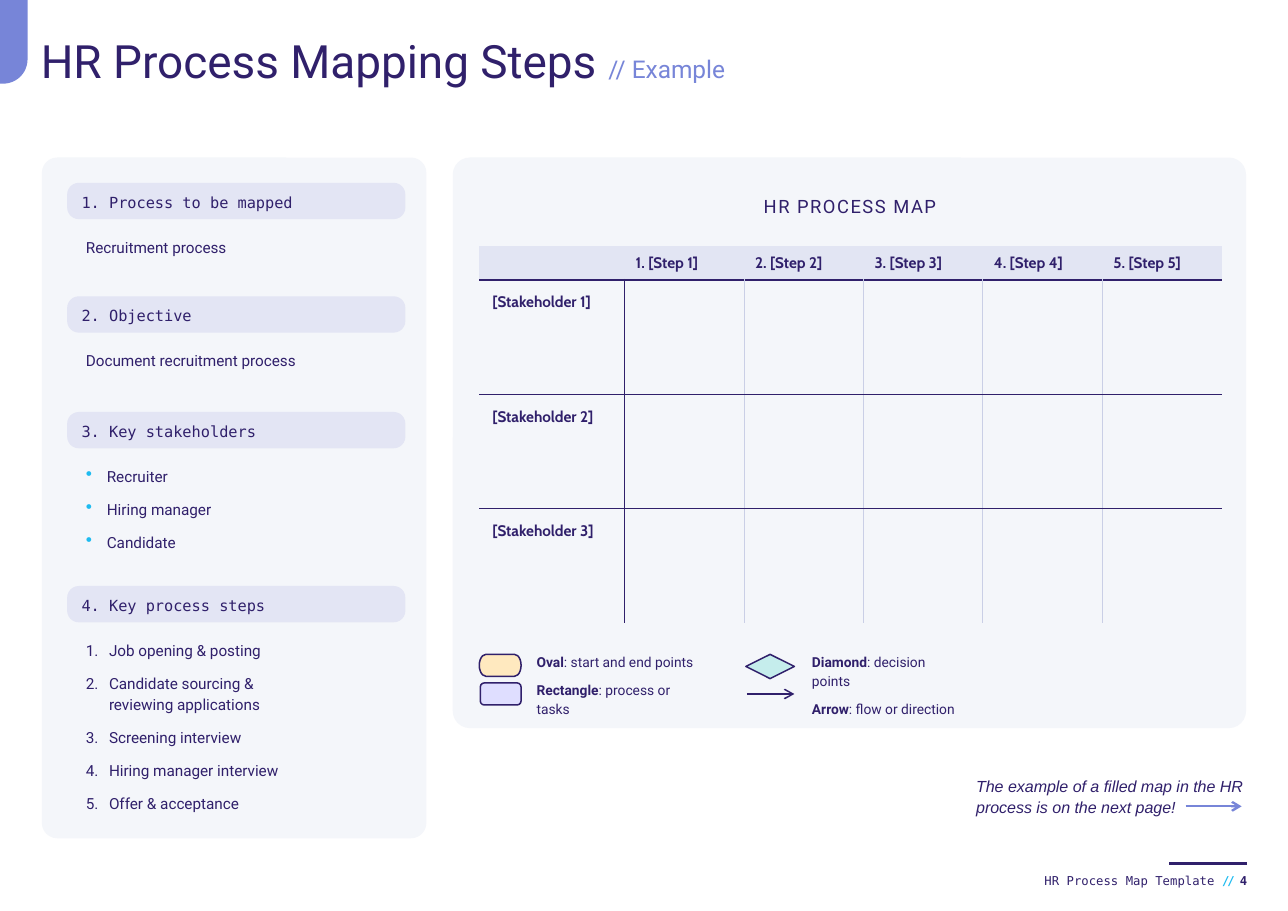
"""Build the HR process mapping steps slide."""
from math import cos, pi, sin

from lxml.etree import SubElement
from pptx import Presentation
from pptx.dml.color import RGBColor
from pptx.enum.shapes import MSO_CONNECTOR, MSO_SHAPE as Shape
from pptx.enum.text import MSO_ANCHOR as Anchor, PP_ALIGN as Align
from pptx.oxml.ns import qn
from pptx.util import Pt

PX = 9144
WIDTH, HEIGHT = 1169, 827
INDIGO = RGBColor(0x30, 0x20, 0x6B)
PERIWINKLE = RGBColor(0x77, 0x85, 0xD8)
CYAN = RGBColor(0x1E, 0xBB, 0xF0)
PANEL = RGBColor(0xF4, 0xF6, 0xFA)
LABEL = RGBColor(0xE3, 0xE5, 0xF4)
HEADER = RGBColor(0xE2, 0xE5, 0xF3)
GRID = RGBColor(0xCA, 0xCF, 0xE6)
CREAM = RGBColor(0xFF, 0xE9, 0xBF)
MINT = RGBColor(0xC5, 0xED, 0xEC)
LILAC = RGBColor(0xDF, 0xDE, 0xFF)
WHITE = RGBColor(0xFF, 0xFF, 0xFF)
SANS, MONO, CABIN, ARIAL = "Roboto", "DejaVu Sans Mono", "Cabin", "Arial"

TITLE = [("HR Process Mapping Steps ", {"size": 30}),
         ("// Example", {"size": 16, "color": PERIWINKLE})]
FOOTER = [("HR Process Map Template ", {}),
          ("// ", {"color": CYAN, "bold": True, "spacing": -150}),
          ("4", {"bold": True})]
SECTIONS = [
    (166, "1. Process to be mapped", None, ["Recruitment process"]),
    (269, "2. Objective", None, ["Document recruitment process"]),
    (374, "3. Key stakeholders", "bullet", ["Recruiter", "Hiring manager", "Candidate"]),
    (532, "4. Key process steps", "number",
     ["Job opening & posting", "Candidate sourcing & reviewing applications",
      "Screening interview", "Hiring manager interview", "Offer & acceptance"]),
]
MAP_TITLE = "HR PROCESS MAP"
MAP_ROWS = [
    ["", "1. [Step 1]", "2. [Step 2]", "3. [Step 3]", "4. [Step 4]", "5. [Step 5]"],
    ["[Stakeholder 1]"] + [""] * 5,
    ["[Stakeholder 2]"] + [""] * 5,
    ["[Stakeholder 3]"] + [""] * 5,
]
COLUMN_WIDTHS = [132] + [108.4] * 5
ROW_HEIGHTS = [31] + [104] * 3
LEGEND = [
    (487, 146, [("Oval", ": start and end points"), ("Rectangle", ": process or tasks")]),
    (737, 137, [("Diamond", ": decision points"), ("Arrow", ": flow or direction")]),
]
LEGEND_SHAPES = [
    (Shape.FLOWCHART_TERMINATOR, (435, 594, 38, 20), CREAM, None),
    (Shape.FLOWCHART_DECISION, (677, 594, 44, 22), MINT, None),
    (Shape.ROUNDED_RECTANGLE, (436, 620, 37, 20), LILAC, 0.18),
]
NOTE = "The example of a filled map in the HR process is on the next page!"

deck = Presentation()
deck.slide_width, deck.slide_height = WIDTH * PX, HEIGHT * PX
slide = deck.slides.add_slide(deck.slide_layouts[6])


def emu(lengths):
    return [round(length * PX) for length in lengths]


def style_run(span, font, size, color=INDIGO, bold=False, italic=False, spacing=0):
    span.font.name, span.font.size = font, Pt(size)
    span.font.color.rgb = color
    span.font.bold, span.font.italic = bold, italic
    if spacing:
        span.font._element.set("spc", str(spacing))


def write(frame, paragraphs, font, size, line=1.13, after=0, align=Align.LEFT, inset=0,
          anchor=Anchor.TOP, marker=None, **style):
    frame.word_wrap = True
    frame.vertical_anchor = anchor
    frame.margin_left = frame.margin_right = inset * PX
    frame.margin_top = frame.margin_bottom = 0
    for index, spans in enumerate(paragraphs):
        para = frame.add_paragraph() if index else frame.paragraphs[0]
        para.line_spacing, para.space_after, para.alignment = line, Pt(after), align
        for words, changes in spans:
            span = para.add_run()
            span.text = words
            style_run(span, **{"font": font, "size": size, **style, **changes})
        if marker:
            add_marker(para, marker)


def add_marker(para, marker):
    props = para._p.get_or_add_pPr()
    indent = (19 if marker == "bullet" else 21) * PX
    props.set("marL", str(indent))
    props.set("indent", str(-indent))
    color = CYAN if marker == "bullet" else INDIGO
    SubElement(SubElement(props, qn("a:buClr")), qn("a:srgbClr"), val=str(color))
    if marker == "bullet":
        SubElement(props, qn("a:buSzPct"), val="120000")
        SubElement(props, qn("a:buChar"), char="•")
    else:
        SubElement(props, qn("a:buAutoNum"), type="arabicPeriod")


def add_text(place, paragraphs, font, size, **style):
    box = slide.shapes.add_textbox(*emu(place))
    write(box.text_frame, paragraphs, font, size, **style)


def paint(shape, fill, outline=None):
    shape.shadow.inherit = False
    shape.fill.solid()
    shape.fill.fore_color.rgb = fill
    if outline:
        shape.line.color.rgb, shape.line.width = outline, Pt(1)
    else:
        shape.line.fill.background()


def add_block(kind, place, fill, corner=None, outline=None):
    shape = slide.shapes.add_shape(kind, *emu(place))
    paint(shape, fill, outline)
    if corner is not None:
        shape.adjustments[0] = corner
    return shape


def add_line(start, end, y, color, width, arrow=False):
    line = slide.shapes.add_connector(MSO_CONNECTOR.STRAIGHT, *emu((start, y, end, y)))
    line.line.color.rgb, line.line.width = color, Pt(width)
    if arrow:
        SubElement(line.line._get_or_add_ln(), qn("a:tailEnd"), type="arrow")
    SubElement(line._element.spPr, qn("a:effectLst"))


def add_corner_tab(width, height, radius):
    arc = [(width - radius + radius * cos(step * pi / 24),
            height - radius + radius * sin(step * pi / 24)) for step in range(13)]
    builder = slide.shapes.build_freeform(0, 0)
    builder.add_line_segments([emu(point) for point in [(width, 0), *arc, (0, height)]])
    paint(builder.convert_to_shape(), PERIWINKLE)


def add_border(cell, side, color, width):
    line = SubElement(cell._tc.get_or_add_tcPr(), qn(f"a:ln{side}"), w=str(Pt(width)))
    SubElement(SubElement(line, qn("a:solidFill")), qn("a:srgbClr"), val=str(color))


def add_borders(cell, row, column):
    last_row, last_column = len(ROW_HEIGHTS) - 1, len(COLUMN_WIDTHS) - 1
    if row and column:
        add_border(cell, "L", INDIGO if column == 1 else GRID, 0.75)
    if row and column < last_column:
        add_border(cell, "R", GRID if column else INDIGO, 0.75)
    if row:
        add_border(cell, "T", INDIGO, 1.5 if row == 1 else 0.75)
    if row < last_row:
        add_border(cell, "B", INDIGO, 0.75 if row else 1.5)


def add_map():
    size = len(ROW_HEIGHTS), len(COLUMN_WIDTHS)
    place = emu((435, 223, sum(COLUMN_WIDTHS), sum(ROW_HEIGHTS)))
    table = slide.shapes.add_table(*size, *place).table
    table.first_row = table.horz_banding = False
    style = table._tbl.tblPr.find(qn("a:tableStyleId"))
    style.text = "{2D5ABB26-0587-4C30-8999-92F81FD0307C}"
    for column, width in zip(table.columns, emu(COLUMN_WIDTHS)):
        column.width = width
    for row, height in zip(table.rows, emu(ROW_HEIGHTS)):
        row.height = height
    for row, texts in enumerate(MAP_ROWS):
        for column, words in enumerate(texts):
            cell = table.cell(row, column)
            add_borders(cell, row, column)
            if row:
                cell.fill.background()
            else:
                cell.fill.solid()
                cell.fill.fore_color.rgb = HEADER
                cell.vertical_anchor = Anchor.MIDDLE
            if row and not column:
                cell.margin_left = cell.margin_top = cell.margin_right = 12 * PX
            para = cell.text_frame.paragraphs[0]
            if words:
                para.text = words
                style_run(para.runs[0], CABIN, 10, bold=True)
            else:
                SubElement(para._p, qn("a:endParaRPr"), sz="1000")


add_text((37, 791, 1095, 19), [FOOTER], MONO, 8, line=1.14, align=Align.RIGHT)
add_line(1132, 1061, 784, INDIGO, 2)
add_block(Shape.ROUNDED_RECTANGLE, (411, 143, 720, 518), PANEL, 0.03)
add_corner_tab(25, 76, 22)
add_text((37, 35, 1095, 51), [TITLE], SANS, 30, line=0.9)
add_block(Shape.ROUNDED_RECTANGLE, (38, 143, 349, 618), PANEL, 0.04)
for top, heading, marker, lines in SECTIONS:
    add_block(Shape.ROUNDED_RECTANGLE, (61, top, 307, 33), LABEL, 0.32)
    add_text((74, top + 7, 245, 19), [[(heading, {})]], MONO, 10)
    add_text((78, top + 48, 197, 24), [[(words, {})] for words in lines], SANS, 10,
             after=8, marker=marker)
add_map()
note = add_block(Shape.RECTANGLE, (870, 695, 299, 54), WHITE)
write(note.text_frame, [[(NOTE, {})]], ARIAL, 10.5, inset=16, anchor=Anchor.MIDDLE, italic=True)
add_line(1076, 1127, 732, PERIWINKLE, 1.5, arrow=True)
for left, width, entries in LEGEND:
    spans = [[(name, {"bold": True}), (meaning, {})] for name, meaning in entries]
    add_text((left, 595, width, 53), spans, SANS, 9, line=1.12, after=6, anchor=Anchor.MIDDLE)
for kind, place, fill, corner in LEGEND_SHAPES:
    add_block(kind, place, fill, corner, INDIGO)
add_line(678, 721, 630, INDIGO, 1, arrow=True)
add_text((682, 175, 179, 19), [[(MAP_TITLE, {})]], SANS, 12, align=Align.CENTER, spacing=100)
deck.save("out.pptx")
